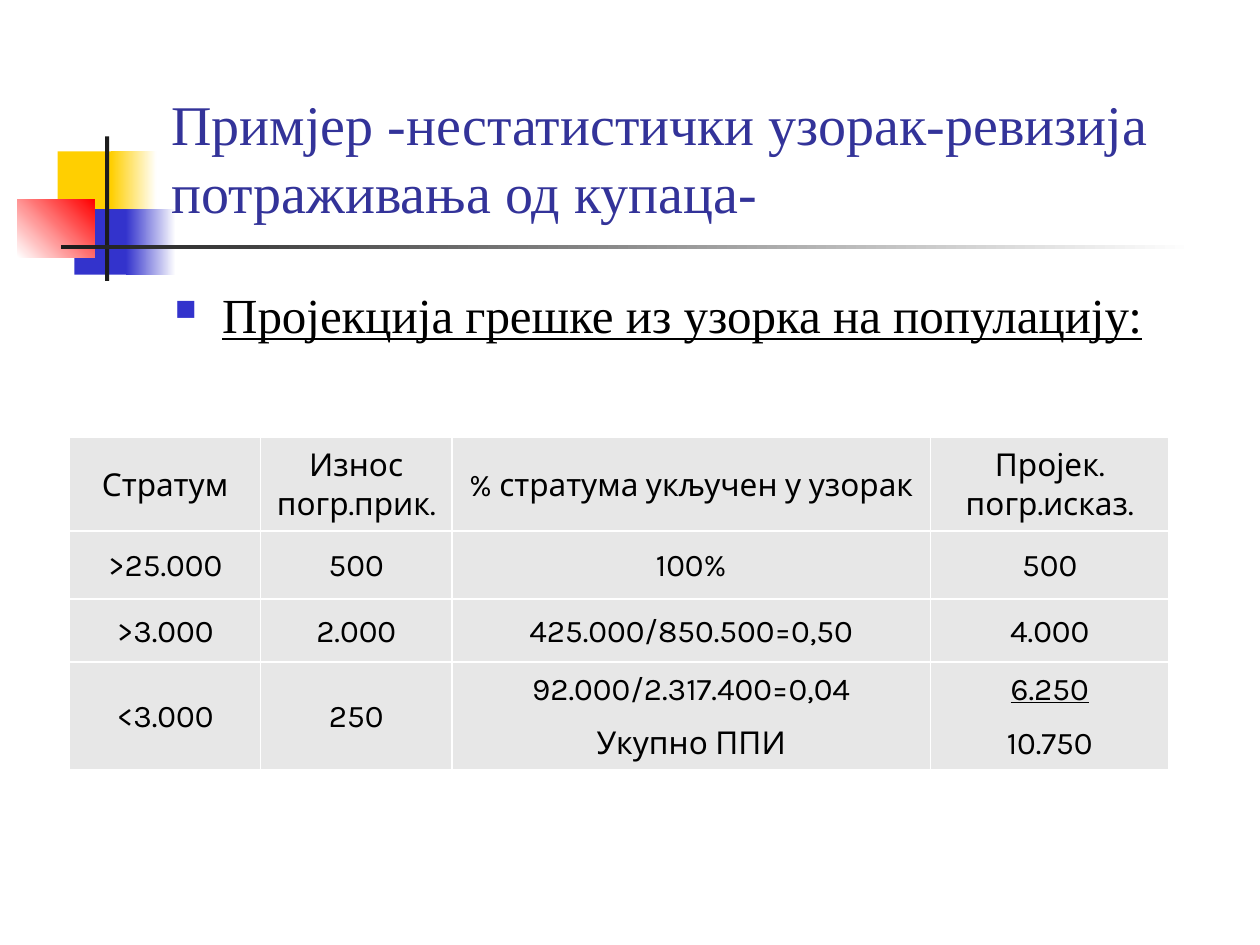
"""Build the slide on projecting sample errors to the population."""
from pptx import Presentation
from pptx.dml.color import RGBColor
from pptx.enum.shapes import MSO_SHAPE as SHAPE
from pptx.enum.text import MSO_ANCHOR as ANCHOR, MSO_AUTO_SIZE as AUTO, PP_ALIGN as ALIGN
from pptx.oxml import parse_xml
from pptx.oxml.ns import nsdecls
from pptx.util import Pt

TITLE = "Примјер -нестатистички узорак-ревизија потраживања од купаца-"
BULLET = "Пројекција грешке из узорка на популацију:"
HEAD_FONT, CELL_FONT = "Times New Roman", "Karla"
WHITE, BLACK, CELL_FILL = "FFFFFF", "000000", "E7E7E7"
YELLOW, BLUE, RED, DARK = "FFCF01", "3333CC", "FF0000", "1C1C1C"

DECOR = [
    ((33, 86.5, 34.5, 37.5), [YELLOW], 0),
    ((63.5, 86.5, 26, 37.5), [YELLOW, WHITE], 0),
    ((42.5, 119.5, 33, 37.5), [BLUE], 0),
    ((72, 119.5, 28.5, 37.5), [BLUE, WHITE], 0),
    ((10, 114, 44, 33), [WHITE, RED], 45),
    ((60, 78, 2.4, 82.5), [DARK], 0),
    ((34.6, 140, 648, 2.5), [DARK, WHITE], 0),
]

COL_WIDTHS = [109.2, 109.2, 273.6, 136.2]
ROW_HEIGHTS = [52.3, 38.9, 36, 60]
ROWS = [
    ["Стратум", "Износ погр.прик.", "% стратума укључен у узорак", "Пројек. погр.исказ."],
    [">25.000", "500", "100%", "500"],
    [">3.000", "2.000", "425.000/850.500=0,50", "4.000"],
    ["<3.000", "250", "92.000/2.317.400=0,04\nУкупно ППИ", "6.250\n10.750"],
]
UNDERLINED = "6.250"


def rgb(color):
    """Turn a hex string into a colour."""
    return RGBColor.from_string(color)


def apply(obj, **values):
    """Set each named attribute on an object."""
    for name, value in values.items():
        setattr(obj, name, value)


def add_run(p, text, size, font, color, underline=None):
    """Add one formatted run to a paragraph."""
    r = p.add_run()
    r.text = text
    apply(r.font, size=Pt(size), name=font, underline=underline)
    r.font.color.rgb = rgb(color)


def add_bar(s, box, colors, angle):
    """Add a borderless rectangle with a solid or two-colour fill."""
    sp = s.shapes.add_shape(SHAPE.RECTANGLE, *map(Pt, box))
    sp.shadow.inherit = False
    sp.line.fill.background()
    if len(colors) == 1:
        sp.fill.solid()
        sp.fill.fore_color.rgb = rgb(colors[0])
        return
    sp.fill.gradient()
    sp.fill.gradient_angle = angle
    for stop, color, position in zip(sp.fill.gradient_stops, colors, (0, 1)):
        stop.color.rgb = rgb(color)
        stop.position = position


def add_title(s):
    """Place the title placeholder in front of the decoration."""
    sp = s.shapes.title
    s.shapes.element.append(sp.element)
    apply(sp, left=Pt(90.7), top=Pt(16.6), width=Pt(613.4), height=Pt(115.2))
    tf = sp.text_frame
    apply(tf, word_wrap=True, auto_size=AUTO.NONE, vertical_anchor=ANCHOR.BOTTOM)
    p = tf.paragraphs[0]
    p.alignment = ALIGN.LEFT
    add_run(p, TITLE, 32, HEAD_FONT, "333399")


def add_bullet(s):
    """Add the bulleted line under the title."""
    tf = s.shapes.add_textbox(Pt(92.9), Pt(159.1), Pt(612), Pt(324)).text_frame
    tf.word_wrap = True
    p = tf.paragraphs[0]
    pPr = p._p.get_or_add_pPr()
    pPr.set("marL", str(Pt(27)))
    pPr.set("indent", str(Pt(-27)))
    for xml in (f'<a:buClr {nsdecls("a")}><a:srgbClr val="{BLUE}"/></a:buClr>',
                f'<a:buSzPct {nsdecls("a")} val="60000"/>',
                f'<a:buChar {nsdecls("a")} char="■"/>'):
        pPr.append(parse_xml(xml))
    add_run(p, BULLET, 28, HEAD_FONT, BLACK, True)


def fill_cell(cell, text):
    """Write, fill and border one table cell."""
    cell.vertical_anchor = ANCHOR.MIDDLE
    tf = cell.text_frame
    for i, line in enumerate(text.split("\n")):
        p = tf.add_paragraph() if i else tf.paragraphs[0]
        apply(p, alignment=ALIGN.CENTER, line_spacing=1.07, space_after=Pt(8))
        add_run(p, line, 18, CELL_FONT, BLACK, line == UNDERLINED)
    tcPr = cell._tc.get_or_add_tcPr()
    for side in ("lnL", "lnR", "lnT", "lnB"):
        tcPr.append(parse_xml(
            f'<a:{side} {nsdecls("a")} w="{Pt(1)}"><a:solidFill>'
            f'<a:srgbClr val="{WHITE}"/></a:solidFill></a:{side}>'))
    cell.fill.solid()
    cell.fill.fore_color.rgb = rgb(CELL_FILL)


def add_projection_table(s):
    """Add the table of projected misstatements."""
    table = s.shapes.add_table(
        len(ROWS), len(COL_WIDTHS), Pt(39.8), Pt(250),
        Pt(sum(COL_WIDTHS)), Pt(sum(ROW_HEIGHTS))).table
    apply(table, first_row=False, horz_banding=False)
    for col, width in zip(table.columns, COL_WIDTHS):
        col.width = Pt(width)
    for row, height, texts in zip(table.rows, ROW_HEIGHTS, ROWS):
        row.height = Pt(height)
        for cell, text in zip(row.cells, texts):
            fill_cell(cell, text)


def main():
    """Build and save the presentation."""
    prs = Presentation()
    apply(prs, slide_width=Pt(720), slide_height=Pt(540))
    s = prs.slides.add_slide(prs.slide_layouts[5])
    for box, colors, angle in DECOR:
        add_bar(s, box, colors, angle)
    add_title(s)
    add_bullet(s)
    add_projection_table(s)
    prs.save("out.pptx")


if __name__ == "__main__":
    main()
